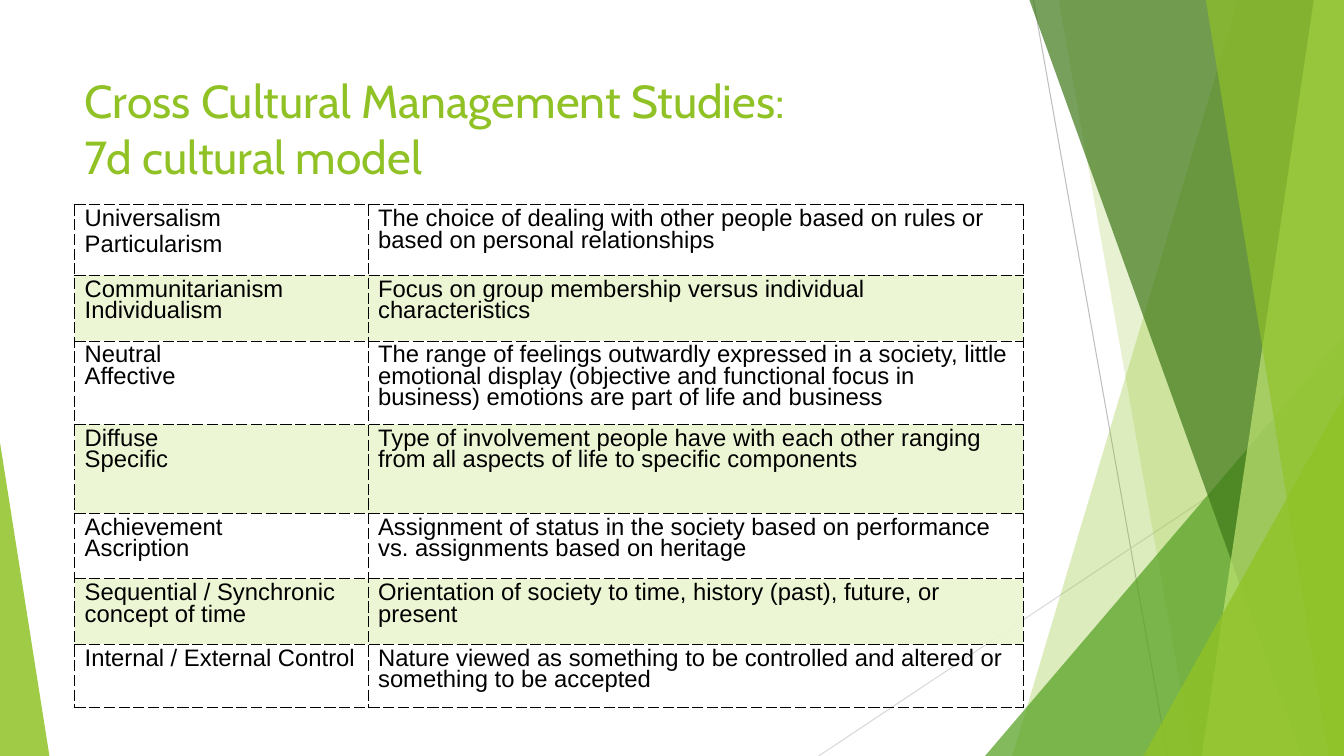
"""Build the slide on the seven dimensions cultural model."""
from dataclasses import dataclass

import pptx
import pptx.dml.color
import pptx.enum.shapes
import pptx.enum.text
import pptx.oxml
import pptx.oxml.ns
import pptx.util
from pptx.util import Inches


@dataclass(frozen=True)
class Theme:
    lime: str = "90C226"
    green: str = "54A021"
    forest: str = "3F7819"
    pale: str = "C0E474"
    band: str = "EAF6D1"
    ink: str = "000000"
    line_dark: str = "BFBFBF"
    line_light: str = "D9D9D9"
    title_font: str = "Cabin"
    body_font: str = "Arial"
    title_size: float = 33
    body_size: float = 17
    para_gap: float = 3.4


THEME = Theme()
WIDTH, HEIGHT = 13.33, 7.5
TITLE = ["Cross Cultural Management Studies:", "7d cultural model"]
COLUMNS = [2.91, 6.5]
ROWS = [
    (0.7, ["Universalism", "Particularism"],
     "The choice of dealing with other people based on rules or based on personal relationships"),
    (0.65, ["Communitarianism", "Individualism"],
     "Focus on group membership versus individual characteristics"),
    (0.83, ["Neutral", "Affective"],
     "The range of feelings outwardly expressed in a society, little emotional display "
     "(objective and functional focus in business) emotions are part of life and business"),
    (0.88, ["Diffuse", "Specific"],
     "Type of involvement people have with each other ranging from all aspects of life "
     "to specific components"),
    (0.65, ["Achievement", "Ascription"],
     "Assignment of status in the society based on performance vs. assignments based on heritage"),
    (0.65, ["Sequential / Synchronic concept of time"],
     "Orientation of society to time, history (past), future, or present"),
    (0.63, ["Internal / External Control"],
     "Nature viewed as something to be controlled and altered or something to be accepted"),
]


def rgb(color):
    return pptx.dml.color.RGBColor.from_string(color)


def set_fill(fill, color, opacity):
    fill.solid()
    fill.fore_color.rgb = rgb(color)
    node = fill.fore_color._xFill.find(pptx.oxml.ns.qn("a:srgbClr"))
    alpha = node.makeelement(pptx.oxml.ns.qn("a:alpha"), {"val": str(opacity * 1000)})
    node.append(alpha)


def add_run(p, text, font, size, color):
    r = p.add_run()
    r.text = text
    r.font.name = font
    r.font.size = pptx.util.Pt(size)
    r.font.color.rgb = rgb(color)


def add_line(s, start, end, color):
    line = s.shapes.add_connector(
        pptx.enum.shapes.MSO_CONNECTOR.STRAIGHT, *map(Inches, start + end))
    line.line.color.rgb = rgb(color)
    line.line.width = pptx.util.Pt(0.75)
    sppr = line._element.spPr
    sppr.append(sppr.makeelement(pptx.oxml.ns.qn("a:effectLst"), {}))


def finish_shape(sp, color, opacity):
    sp.shadow.inherit = False
    sp.line.fill.background()
    set_fill(sp.fill, color, opacity)


def add_facet(s, top, bottom, color, opacity):
    """Add a panel whose slanted left side runs from top to bottom."""
    points = [(Inches(x), Inches(y)) for x, y in
              [(top, 0), (WIDTH, 0), (WIDTH, HEIGHT), (bottom, HEIGHT)]]
    builder = s.shapes.build_freeform(*points[0], scale=1.0)
    builder.add_line_segments(points[1:], close=True)
    finish_shape(builder.convert_to_shape(), color, opacity)


def add_triangle(s, left, top, width, apex, color, opacity):
    sp = s.shapes.add_shape(
        pptx.enum.shapes.MSO_SHAPE.ISOSCELES_TRIANGLE,
        Inches(left), Inches(top), Inches(width), Inches(HEIGHT - top))
    sp.adjustments[0] = apex
    finish_shape(sp, color, opacity)


def add_decoration(s):
    add_line(s, (10.25, 0), (11.58, HEIGHT), THEME.line_dark)
    add_line(s, (WIDTH, 4.03), (8.12, HEIGHT), THEME.line_light)
    add_facet(s, 12.28, 10.04, THEME.lime, 30)
    add_facet(s, 10.5, 11.83, THEME.lime, 20)
    add_triangle(s, 9.77, 3.33, 3.56, 1, THEME.green, 72)
    add_facet(s, 10.21, 12.91, THEME.forest, 70)
    add_facet(s, 13.03, 11.92, THEME.pale, 70)
    add_facet(s, 11.96, 13.18, THEME.lime, 65)
    add_triangle(s, 11.34, 3.93, 1.99, 1, THEME.lime, 80)
    add_triangle(s, 0, 4.39, 0.49, 0, THEME.lime, 85)


def add_title(s):
    sp = s.shapes.title
    sp.left, sp.top, sp.width, sp.height = map(Inches, (0.74, 0.67, 9.4, 1.44))
    tf = sp.text_frame
    tf.word_wrap = True
    tf.auto_size = pptx.enum.text.MSO_AUTO_SIZE.NONE
    tf.vertical_anchor = pptx.enum.text.MSO_ANCHOR.TOP
    p = tf.paragraphs[0]
    p.alignment = pptx.enum.text.PP_ALIGN.LEFT
    for i, text in enumerate(TITLE):
        if i:
            p.add_line_break()
        add_run(p, text, THEME.title_font, THEME.title_size, THEME.lime)


def add_borders(cell):
    tcpr = cell._tc.get_or_add_tcPr()
    for side in ("lnL", "lnR", "lnT", "lnB"):
        tcpr.append(pptx.oxml.parse_xml(
            f'<a:{side} {pptx.oxml.ns.nsdecls("a")} w="3175"><a:solidFill>'
            f'<a:srgbClr val="{THEME.ink}"/></a:solidFill>'
            f'<a:prstDash val="sysDash"/></a:{side}>'))


def fill_cell(cell, texts, banded, gap):
    add_borders(cell)
    if banded:
        set_fill(cell.fill, THEME.band, 90)
    else:
        cell.fill.background()
    tf = cell.text_frame
    for i, text in enumerate(texts):
        p = tf.add_paragraph() if i else tf.paragraphs[0]
        p.line_spacing = 0.8
        p.space_before = pptx.util.Pt(gap if i else 0)
        add_run(p, text, THEME.body_font, THEME.body_size, THEME.ink)


def add_dimensions(s):
    height = sum(row[0] for row in ROWS)
    frame = s.shapes.add_table(
        len(ROWS), len(COLUMNS), Inches(0.74), Inches(2.03),
        Inches(sum(COLUMNS)), Inches(height))
    table = frame.table
    table.first_row = table.horz_banding = False
    for column, width in zip(table.columns, COLUMNS):
        column.width = Inches(width)
    for i, (row_height, names, meaning) in enumerate(ROWS):
        table.rows[i].height = Inches(row_height)
        gap = 0 if i else THEME.para_gap
        for j, texts in enumerate((names, [meaning])):
            fill_cell(table.cell(i, j), texts, i % 2 == 1, gap)


def main():
    prs = pptx.Presentation()
    prs.slide_width, prs.slide_height = Inches(WIDTH), Inches(HEIGHT)
    s = prs.slides.add_slide(prs.slide_layouts[5])
    add_decoration(s)
    add_title(s)
    add_dimensions(s)
    prs.save("out.pptx")


if __name__ == "__main__":
    main()
